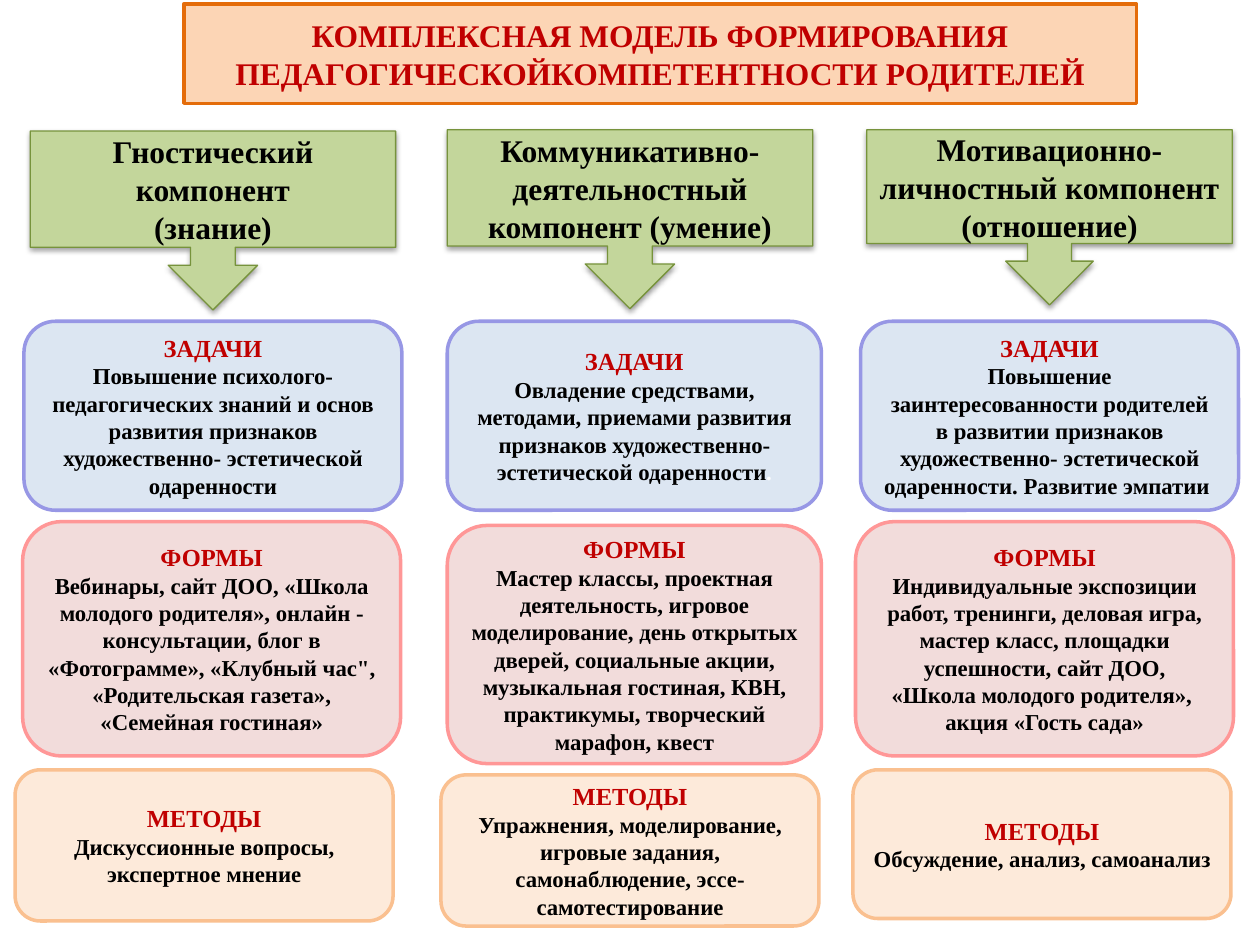
from dataclasses import dataclass

import lxml.etree
import pptx
import pptx.dml.color
import pptx.enum.shapes
import pptx.enum.text
import pptx.oxml.ns
import pptx.shapes.autoshape
import pptx.slide
import pptx.util
from pptx.dml.color import RGBColor
from pptx.util import Inches

FONT = "Times New Roman"
BLACK = RGBColor(0x00, 0x00, 0x00)
WHITE = RGBColor(0xFF, 0xFF, 0xFF)
RED = RGBColor(0xC0, 0x00, 0x00)
TITLE_FILL = RGBColor(0xFC, 0xD5, 0xB5)
TITLE_LINE = RGBColor(0xE4, 0x6C, 0x0A)
GREEN = RGBColor(0xC3, 0xD6, 0x9B)
DARK_GREEN = RGBColor(0x77, 0x93, 0x3C)
PALE_BLUE = RGBColor(0xDC, 0xE6, 0xF2)
VIOLET = RGBColor(0x97, 0x97, 0xE5)
PALE_PINK = RGBColor(0xF2, 0xDC, 0xDB)
PINK = RGBColor(0xFF, 0x97, 0x97)
CREAM = RGBColor(0xFD, 0xEA, 0xDA)
PEACH = RGBColor(0xFA, 0xC0, 0x90)


@dataclass(frozen=True)
class Area:
    left: float
    top: float
    width: float
    height: float


@dataclass(frozen=True)
class Style:
    fill: RGBColor
    line: RGBColor
    line_width: float


@dataclass(frozen=True)
class Line:
    text: str
    size: int
    color: RGBColor


@dataclass(frozen=True)
class Entry:
    area: Area
    texts: tuple[str, ...]
    faint_end: str = ""


@dataclass(frozen=True)
class Section:
    heading: str
    style: Style
    entries: tuple[Entry, ...]


TITLE_AREA = Area(1.46, 0.03, 7.56, 0.79)
TITLE_STYLE = Style(TITLE_FILL, TITLE_LINE, 2)
TITLE = "КОМПЛЕКСНАЯ МОДЕЛЬ ФОРМИРОВАНИЯ ПЕДАГОГИЧЕСКОЙКОМПЕТЕНТНОСТИ РОДИТЕЛЕЙ"
COMPONENT_STYLE = Style(GREEN, DARK_GREEN, 0.75)
COMPONENTS = (
    Entry(Area(0.24, 1.04, 2.9, 1.42), ("Гностический компонент", "(знание)")),
    Entry(Area(3.55, 1.03, 2.9, 1.42),
          ("Коммуникативно-деятельностный", "компонент (умение)")),
    Entry(Area(6.88, 1.03, 2.9, 1.39),
          ("Мотивационно- личностный компонент", "(отношение)")),
)
SECTIONS = (
    Section("ЗАДАЧИ", Style(PALE_BLUE, VIOLET, 2), (
        Entry(Area(0.19, 2.55, 3, 1.5),
              ("Повышение психолого- педагогических знаний и основ развития "
               "признаков художественно- эстетической одаренности",)),
        Entry(Area(3.55, 2.55, 2.97, 1.5),
              ("Овладение средствами, методами, приемами развития признаков "
               "художественно- эстетической одаренности",), "."),
        Entry(Area(6.83, 2.55, 3, 1.5),
              ("Повышение заинтересованности родителей в развитии признаков "
               "художественно- эстетической одаренности. Развитие эмпатии ",)),
    )),
    Section("ФОРМЫ", Style(PALE_PINK, PINK, 2), (
        Entry(Area(0.18, 4.14, 3, 1.86),
              ("Вебинары, сайт ДОО, «Школа молодого родителя», онлайн - "
               "консультации, блог в «Фотограмме», «Клубный час\", "
               "«Родительская газета», «Семейная гостиная»",)),
        Entry(Area(3.55, 4.17, 2.97, 1.89),
              ("Мастер классы, проектная деятельность, игровое моделирование, "
               "день открытых дверей, социальные акции, музыкальная гостиная, "
               "КВН, практикумы, творческий марафон, квест",)),
        Entry(Area(6.79, 4.14, 3, 1.86),
              ("Индивидуальные экспозиции работ, тренинги, деловая игра, "
               "мастер класс, площадки успешности, сайт ДОО, "
               "«Школа молодого родителя», ", "акция «Гость сада»")),
    )),
    Section("МЕТОДЫ", Style(CREAM, PEACH, 2), (
        Entry(Area(0.12, 6.11, 3, 1.2),
              ("Дискуссионные вопросы, экспертное мнение",)),
        Entry(Area(3.5, 6.15, 3, 1.2),
              ("Упражнения, моделирование, игровые задания, "
               "самонаблюдение, эссе- самотестирование",)),
        Entry(Area(6.77, 6.11, 3, 1.18), ("Обсуждение, анализ, самоанализ",)),
    )),
)


def add_node(parent: lxml.etree._Element, tag: str, **attributes: str) -> lxml.etree._Element:
    return lxml.etree.SubElement(parent, pptx.oxml.ns.qn(tag), attributes)


def paint(shape: pptx.shapes.autoshape.Shape, style: Style) -> None:
    shape.fill.solid()
    shape.fill.fore_color.rgb = style.fill
    shape.line.color.rgb = style.line
    shape.line.width = pptx.util.Pt(style.line_width)


def write(shape: pptx.shapes.autoshape.Shape, lines: list[Line]) -> None:
    frame = shape.text_frame
    frame.word_wrap = True
    frame.auto_size = pptx.enum.text.MSO_AUTO_SIZE.NONE
    frame.vertical_anchor = pptx.enum.text.MSO_ANCHOR.MIDDLE
    for index, line in enumerate(lines):
        para = frame.add_paragraph() if index else frame.paragraphs[0]
        para.text = line.text
        para.alignment = pptx.enum.text.PP_ALIGN.CENTER
        para.font.name = FONT
        para.font.size = pptx.util.Pt(line.size)
        para.font.bold = True
        para.font.color.rgb = line.color


def add_box(page: pptx.slide.Slide, kind: pptx.enum.shapes.MSO_SHAPE, area: Area,
            style: Style, lines: list[Line]) -> pptx.shapes.autoshape.Shape:
    box = page.shapes.add_shape(kind, Inches(area.left), Inches(area.top),
                                Inches(area.width), Inches(area.height))
    box.shadow.inherit = False
    paint(box, style)
    write(box, lines)
    return box


def add_title(page: pptx.slide.Slide) -> None:
    title = page.shapes.title
    title.left, title.top = Inches(TITLE_AREA.left), Inches(TITLE_AREA.top)
    title.width, title.height = Inches(TITLE_AREA.width), Inches(TITLE_AREA.height)
    geometry = add_node(title.element.spPr, "a:prstGeom", prst="roundRect")
    add_node(geometry, "a:avLst")
    paint(title, TITLE_STYLE)
    write(title, [Line(TITLE, 18, RED)])


def add_component(page: pptx.slide.Slide, entry: Entry) -> None:
    lines = [Line(text, 18, BLACK) for text in entry.texts]
    callout = add_box(page, pptx.enum.shapes.MSO_SHAPE.DOWN_ARROW_CALLOUT,
                      entry.area, COMPONENT_STYLE, lines)
    effects = callout.element.spPr.find(pptx.oxml.ns.qn("a:effectLst"))
    shadow = add_node(effects, "a:outerShdw", blurRad="40000", dist="20000",
                      dir="5400000", rotWithShape="0")
    add_node(add_node(shadow, "a:srgbClr", val="000000"), "a:alpha", val="38000")


def add_card(page: pptx.slide.Slide, section: Section, entry: Entry) -> None:
    lines = [Line(section.heading, 14, RED)]
    lines += [Line(text, 13, BLACK) for text in entry.texts]
    card = add_box(page, pptx.enum.shapes.MSO_SHAPE.ROUNDED_RECTANGLE,
                   entry.area, section.style, lines)
    if entry.faint_end:
        span = card.text_frame.paragraphs[-1].add_run()
        span.text = entry.faint_end
        span.font.color.rgb = WHITE


def main() -> None:
    deck = pptx.Presentation()
    deck.slide_width, deck.slide_height = Inches(10), Inches(7.5)
    page = deck.slides.add_slide(deck.slide_layouts[5])
    add_title(page)
    for component in COMPONENTS:
        add_component(page, component)
    for section in SECTIONS:
        for entry in section.entries:
            add_card(page, section, entry)
    deck.save("out.pptx")


if __name__ == "__main__":
    main()
